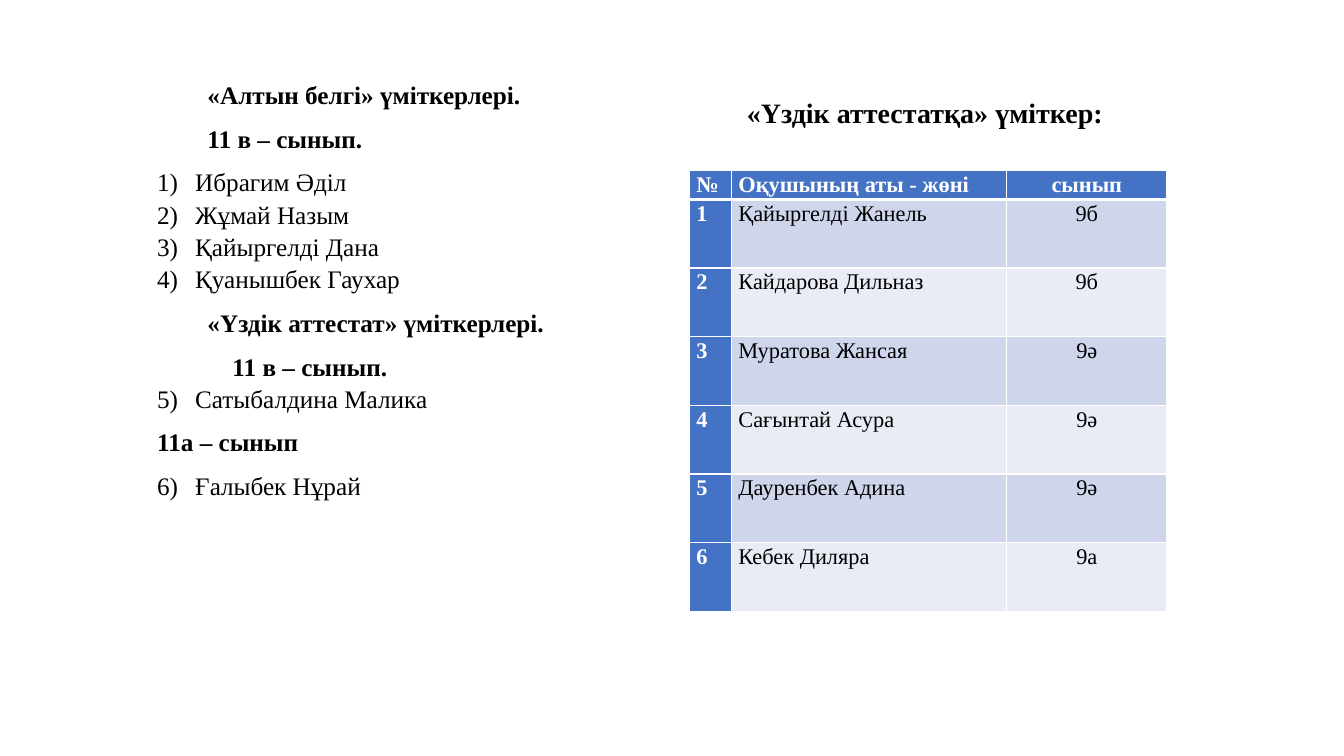
from lxml import etree
from pptx import Presentation
from pptx.dml.color import RGBColor
from pptx.enum.text import MSO_ANCHOR, MSO_AUTO_SIZE, PP_ALIGN
from pptx.oxml.ns import qn
from pptx.util import Cm, Pt

LEFT, CENTER = PP_ALIGN.LEFT, PP_ALIGN.CENTER
MIDDLE = MSO_ANCHOR.MIDDLE
GROW = MSO_AUTO_SIZE.SHAPE_TO_FIT_TEXT

FONT = "Times New Roman"
BLACK, WHITE, BLUE = "000000", "FFFFFF", "4472C4"
BANDS = ("CFD5EA", "E9EBF5")
LINE_SPACING = 1.07
HANGING = 0.96

CANDIDATES = [
    ("«Алтын белгі» үміткерлері.", None, 0, 1.27, 8),
    ("11 в – сынып.", None, 0, 1.27, 8),
    ("Ибрагим Әділ", 1, HANGING, -HANGING, 0),
    ("Жұмай Назым", 1, HANGING, -HANGING, 0),
    ("Қайыргелді Дана", 1, HANGING, -HANGING, 0),
    ("Қуанышбек Гаухар", 1, HANGING, -HANGING, 8),
    ("«Үздік аттестат» үміткерлері.", None, 1.27, 0, 8),
    ("11 в – сынып.", None, 1.9, 0, 0),
    ("Сатыбалдина Малика", 5, HANGING, -HANGING, 8),
    ("11а – сынып", None, 0, 0, 8),
    ("Ғалыбек Нұрай", 6, HANGING, -HANGING, 8),
]
HEADERS = ("№", "Оқушының аты - жөні", "сынып")
PUPILS = [
    ("Қайыргелді Жанель", "9б"),
    ("Кайдарова Дильназ", "9б"),
    ("Муратова Жансая", "9ә"),
    ("Сағынтай Асура", "9ә"),
    ("Дауренбек Адина", "9ә"),
    ("Кебек Диляра", "9а"),
]
COLUMN_WIDTHS = (1.06, 6.94, 4.04)
HEADER_HEIGHT, ROW_HEIGHT = 0.72, 1.73


def color(value):
    return RGBColor.from_string(value)


def write(para, text, size, value, bold, after=0):
    para.text = text
    para.space_after = Pt(after)
    para.font.name = FONT
    para.font.size = Pt(size)
    para.font.bold = bold
    para.font.color.rgb = color(value)


def indent(para, margin, first_line):
    properties = para._p.get_or_add_pPr()
    properties.set("marL", str(Cm(margin)))
    properties.set("indent", str(Cm(first_line)))
    return properties


def number(properties, start):
    font = etree.Element(qn("a:buFont"), typeface="+mj-lt")
    numbering = etree.Element(qn("a:buAutoNum"), type="arabicParenR")
    if start > 1:
        numbering.set("startAt", str(start))
    spacing_count = len(properties.findall(qn("a:lnSpc")) + properties.findall(qn("a:spcAft")))
    properties.insert(spacing_count, font)
    properties.insert(spacing_count + 1, numbering)


def border(cell, bottom):
    properties = cell._tc.get_or_add_tcPr()
    for side, width in (("L", 1), ("R", 1), ("T", 1), ("B", bottom)):
        line = etree.SubElement(properties, qn(f"a:ln{side}"), w=str(Pt(width)))
        fill = etree.SubElement(line, qn("a:solidFill"))
        etree.SubElement(fill, qn("a:srgbClr"), val=WHITE)


def add_candidates(page, left, top, width, height):
    box = page.shapes.add_textbox(Cm(left), Cm(top), Cm(width), Cm(height))
    frame = box.text_frame
    frame.word_wrap = True
    frame.auto_size = GROW
    for index, (text, start, margin, first_line, after) in enumerate(CANDIDATES):
        para = frame.add_paragraph() if index else frame.paragraphs[0]
        write(para, text, 18, BLACK, start is None, after)
        para.line_spacing = LINE_SPACING
        properties = indent(para, margin, first_line)
        if start:
            number(properties, start)


def add_heading(page, left, top, width, height):
    box = page.shapes.add_textbox(Cm(left), Cm(top), Cm(width), Cm(height))
    frame = box.text_frame
    frame.word_wrap = False
    frame.auto_size = GROW
    frame.vertical_anchor = MIDDLE
    write(frame.paragraphs[0], "«Үздік аттестатқа» үміткер:", 20, BLACK, True)


def add_pupils(page, left, top):
    rows = [HEADERS] + [(str(i), *pupil) for i, pupil in enumerate(PUPILS, 1)]
    height = HEADER_HEIGHT + ROW_HEIGHT * len(PUPILS)
    table = page.shapes.add_table(
        len(rows), len(HEADERS), Cm(left), Cm(top), Cm(sum(COLUMN_WIDTHS)), Cm(height)
    ).table
    table.first_col = True
    for column, width in zip(table.columns, COLUMN_WIDTHS):
        column.width = Cm(width)
    for row_index, texts in enumerate(rows):
        table.rows[row_index].height = Cm(ROW_HEIGHT if row_index else HEADER_HEIGHT)
        for column_index, text in enumerate(texts):
            cell = table.cell(row_index, column_index)
            accent = row_index == 0 or column_index == 0
            cell.margin_left = cell.margin_right = Cm(0.18)
            cell.margin_top = cell.margin_bottom = 0
            border(cell, 1 if row_index else 3)
            cell.fill.solid()
            cell.fill.fore_color.rgb = color(BLUE if accent else BANDS[(row_index - 1) % 2])
            para = cell.text_frame.paragraphs[0]
            write(para, text, 16, WHITE if accent else BLACK, accent, 8)
            para.line_spacing = LINE_SPACING
            para.alignment = CENTER if column_index == 2 else LEFT


def main():
    deck = Presentation()
    deck.slide_width, deck.slide_height = Cm(33.87), Cm(19.05)
    page = deck.slides.add_slide(deck.slide_layouts[6])
    add_candidates(page, 3.71, 1.83, 16.94, 10.97)
    add_pupils(page, 17.37, 4.3)
    add_heading(page, 18.57, 2.26, 9.63, 1.12)
    deck.save("out.pptx")


if __name__ == "__main__":
    main()
